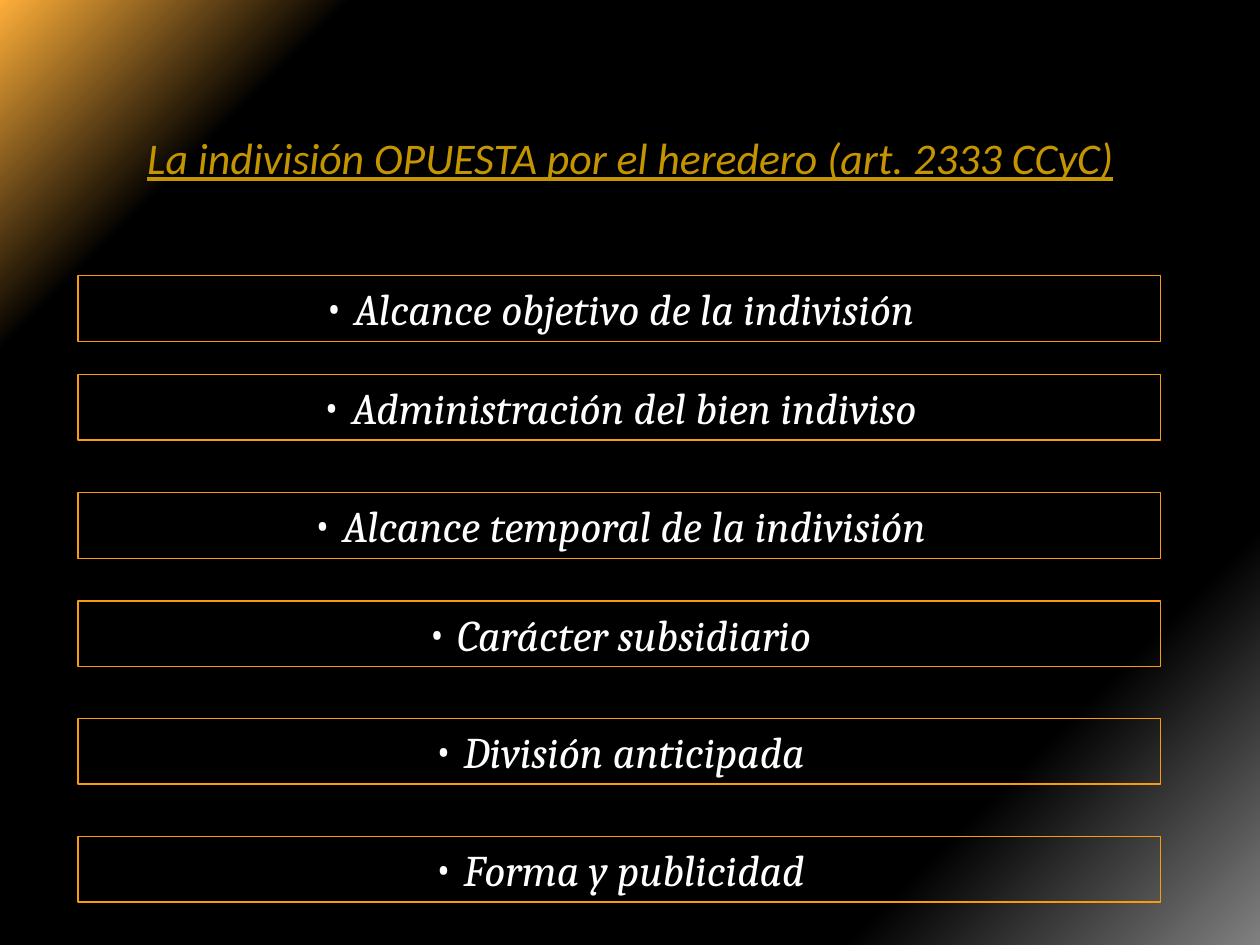
"""Build the slide on undivided inheritance opposed by the heir."""
from dataclasses import dataclass

from lxml import etree
from pptx import Presentation
from pptx.dml.color import RGBColor
from pptx.enum import shapes, text
from pptx.oxml import ns
from pptx.util import Pt

GOLD = RGBColor(0xC4, 0x95, 0x00)
ORANGE = RGBColor(0xF9, 0x9A, 0x0F)
WHITE = RGBColor(0xFF, 0xFF, 0xFF)
AMBER = RGBColor(0xFF, 0xAF, 0x39)
BLACK = RGBColor(0x00, 0x00, 0x00)
GRAY = RGBColor(0x80, 0x80, 0x80)
STOPS = ((0, AMBER), (16, BLACK), (47, BLACK), (60, BLACK),
         (71, BLACK), (81, BLACK), (100, GRAY))
LEFT, WIDTH, HEIGHT = Pt(44.6), Pt(618.5), Pt(37.5)
HANG = Pt(17)


@dataclass
class Item:
    label: str
    top: float


ITEMS = (
    Item("Alcance objetivo de la indivisión", 157.5),
    Item("Administración del bien indiviso", 214),
    Item("Alcance temporal de la indivisión", 281.5),
    Item("Carácter subsidiario", 343.5),
    Item("División anticipada", 410.5),
    Item("Forma y publicidad", 478),
)


def write(frame, label: str, *, font: str, color: RGBColor,
          under: bool = False, bullet: bool = False) -> None:
    """Write one centred italic paragraph into a text frame."""
    frame.word_wrap = True
    frame.vertical_anchor = text.MSO_ANCHOR.MIDDLE
    para = frame.paragraphs[0]
    para.alignment = text.PP_ALIGN.CENTER
    run = para.add_run()
    run.text = label
    face = run.font
    face.name, face.size, face.italic = font, Pt(25), True
    face.underline = under
    face.color.rgb = color
    if bullet:
        props = para._p.get_or_add_pPr()
        props.set("marL", str(HANG))
        props.set("indent", str(-HANG))
        etree.SubElement(props, ns.qn("a:buFont"), typeface="Cambria")
        etree.SubElement(props, ns.qn("a:buChar"), char="•")


def paint(slide) -> None:
    """Fill the background with the diagonal gradient."""
    fill = slide.background.fill
    fill.gradient()
    fill.gradient_angle = 315
    group = next(slide.element.iter(ns.qn("a:gsLst")))
    for old in list(group):
        group.remove(old)
    for place, color in STOPS:
        stop = etree.SubElement(group, ns.qn("a:gs"), pos=str(place * 1000))
        etree.SubElement(stop, ns.qn("a:srgbClr"), val=str(color))


def draw(slide, item: Item) -> None:
    """Draw one outlined box with its bulleted label."""
    box = slide.shapes.add_shape(shapes.MSO_SHAPE.RECTANGLE, LEFT,
                                 Pt(item.top), WIDTH, HEIGHT)
    box.shadow.inherit = False
    box.fill.background()
    box.line.color.rgb = ORANGE
    box.line.width = Pt(0.75)
    write(box.text_frame, item.label, font="Cambria", color=WHITE, bullet=True)
    box.text_frame.auto_size = text.MSO_AUTO_SIZE.SHAPE_TO_FIT_TEXT


def main() -> None:
    """Build and save the deck."""
    deck = Presentation()
    deck.slide_width, deck.slide_height = Pt(720), Pt(540)
    slide = deck.slides.add_slide(deck.slide_layouts[5])
    paint(slide)
    title = slide.shapes.title
    title.left, title.top = Pt(36), Pt(21.6)
    title.width, title.height = Pt(648), Pt(136)
    write(title.text_frame, "La indivisión OPUESTA por el heredero (art. 2333 CCyC)",
          font="Calibri", color=GOLD, under=True)
    for item in ITEMS:
        draw(slide, item)
    deck.save("out.pptx")


if __name__ == "__main__":
    main()
